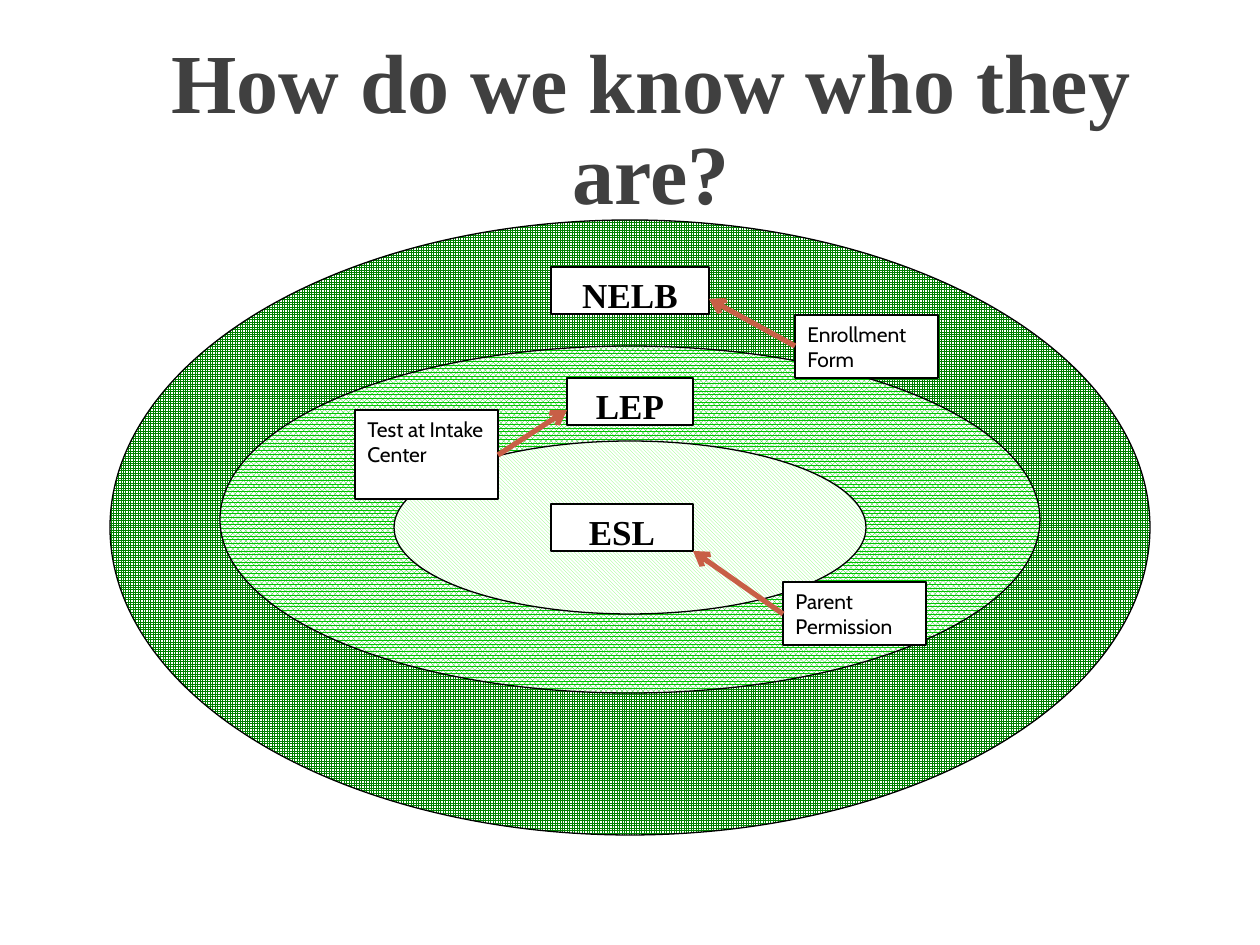
from lxml.etree import SubElement
from pptx import Presentation
from pptx.dml.color import RGBColor
from pptx.enum.dml import MSO_PATTERN as Pattern
from pptx.enum.shapes import MSO_CONNECTOR as Connector, MSO_SHAPE as Shape
from pptx.enum.text import MSO_ANCHOR as Anchor, PP_ALIGN as Align
from pptx.oxml.ns import qn
from pptx.util import Emu, Pt

PX_PER_INCH = 126
COLORS = {
    "white": "FFFFFF",
    "black": "000000",
    "title": "404040",
    "outer": "008000",
    "middle": "00C500",
    "inner": "82FF6E",
    "arrow": "C85F46",
}
TITLE_FONT = {"name": "Times New Roman", "size": Pt(48), "bold": True}
LABEL_FONT = {"name": "Times New Roman", "size": Pt(20), "bold": True}
NOTE_FONT = {"name": "Cabin", "size": Pt(12), "bold": False}

RINGS = [
    ((110, 220, 1040, 615), Pattern.SMALL_GRID, "outer"),
    ((220, 346, 820, 347), Pattern.PERCENT_80, "middle"),
    ((394, 441, 472, 173), Pattern.DARK_DOWNWARD_DIAGONAL, "inner"),
]
LABELS = [
    ("ESL", (551, 504, 142, 47)),
    ("LEP", (567, 378, 126, 47)),
    ("NELB", (551, 267, 158, 47)),
]
NOTES = [
    ("Enrollment Form", (795, 315, 143, 63)),
    ("Test at Intake Center", (355, 410, 143, 89)),
    ("Parent Permission", (783, 582, 143, 63)),
]
ARROWS = [
    (795, 346, 709, 299),
    (498, 455, 567, 410),
    (783, 614, 693, 551),
]


def px(*lengths):
    return [Emu(round(length * 914400 / PX_PER_INCH)) for length in lengths]


def color(name):
    return RGBColor.from_string(COLORS[name])


def write(shape, text, font, color_name, align):
    """Put one wrapped paragraph into a shape and return it."""
    shape.text_frame.word_wrap = True
    paragraph = shape.text_frame.paragraphs[0]
    paragraph.alignment = align
    run = paragraph.add_run()
    run.text = text
    for key, value in font.items():
        setattr(run.font, key, value)
    run.font.color.rgb = color(color_name)
    return paragraph


def add_outlined(slide, kind, box):
    shape = slide.shapes.add_shape(kind, *px(*box))
    shape.shadow.inherit = False
    shape.line.color.rgb = color("black")
    shape.line.width = Pt(0.75)
    return shape


def add_title(slide, text, box):
    shape = slide.shapes.add_textbox(*px(*box))
    shape.text_frame.vertical_anchor = Anchor.MIDDLE
    paragraph = write(shape, text, TITLE_FONT, "title", Align.CENTER)
    paragraph.line_spacing = Pt(52)


def add_ring(slide, box, pattern, color_name):
    fill = add_outlined(slide, Shape.OVAL, box).fill
    fill.patterned()
    fill.pattern = pattern
    fill.fore_color.rgb = color(color_name)
    fill.back_color.rgb = color("white")


def add_box(slide, text, box, font, align):
    shape = add_outlined(slide, Shape.RECTANGLE, box)
    shape.fill.solid()
    shape.fill.fore_color.rgb = color("white")
    shape.text_frame.vertical_anchor = Anchor.TOP
    write(shape, text, font, "black", align)


def add_arrow(slide, ends):
    connector = slide.shapes.add_connector(Connector.STRAIGHT, *px(*ends))
    connector.line.color.rgb = color("arrow")
    connector.line.width = Pt(3)
    SubElement(connector.line._get_or_add_ln(), qn("a:tailEnd"), type="arrow")
    SubElement(connector._element.spPr, qn("a:effectLst"))


def main():
    presentation = Presentation()
    presentation.slide_width, presentation.slide_height = px(1260, 945)
    slide = presentation.slides.add_slide(presentation.slide_layouts[6])

    add_title(slide, "How do we know who they are?", (150, 38, 1002, 184))
    for ring in RINGS:
        add_ring(slide, *ring)
    for text, box in LABELS:
        add_box(slide, text, box, LABEL_FONT, Align.CENTER)
    for text, box in NOTES:
        add_box(slide, text, box, NOTE_FONT, Align.LEFT)
    for ends in ARROWS:
        add_arrow(slide, ends)

    presentation.save("out.pptx")


if __name__ == "__main__":
    main()
